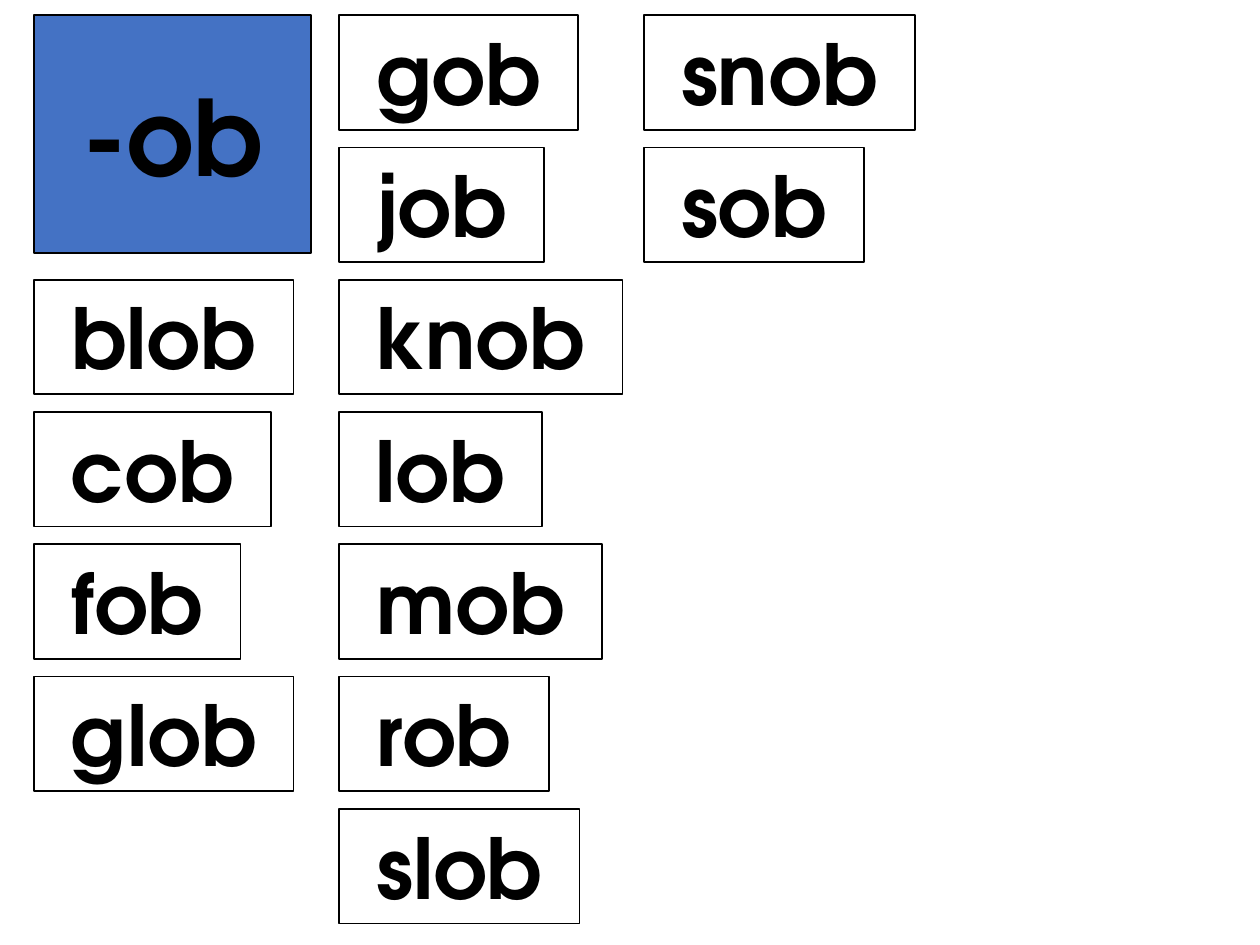
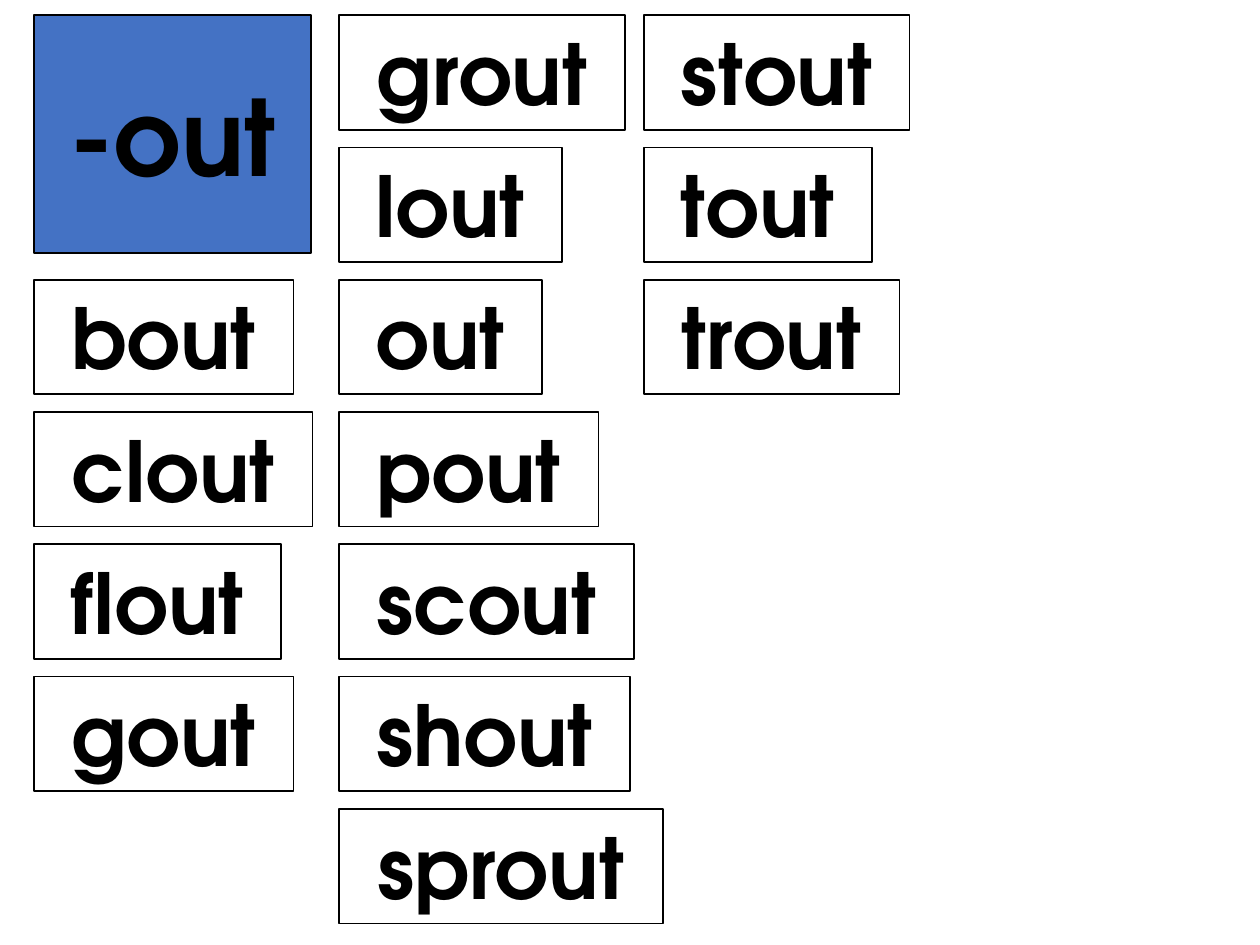
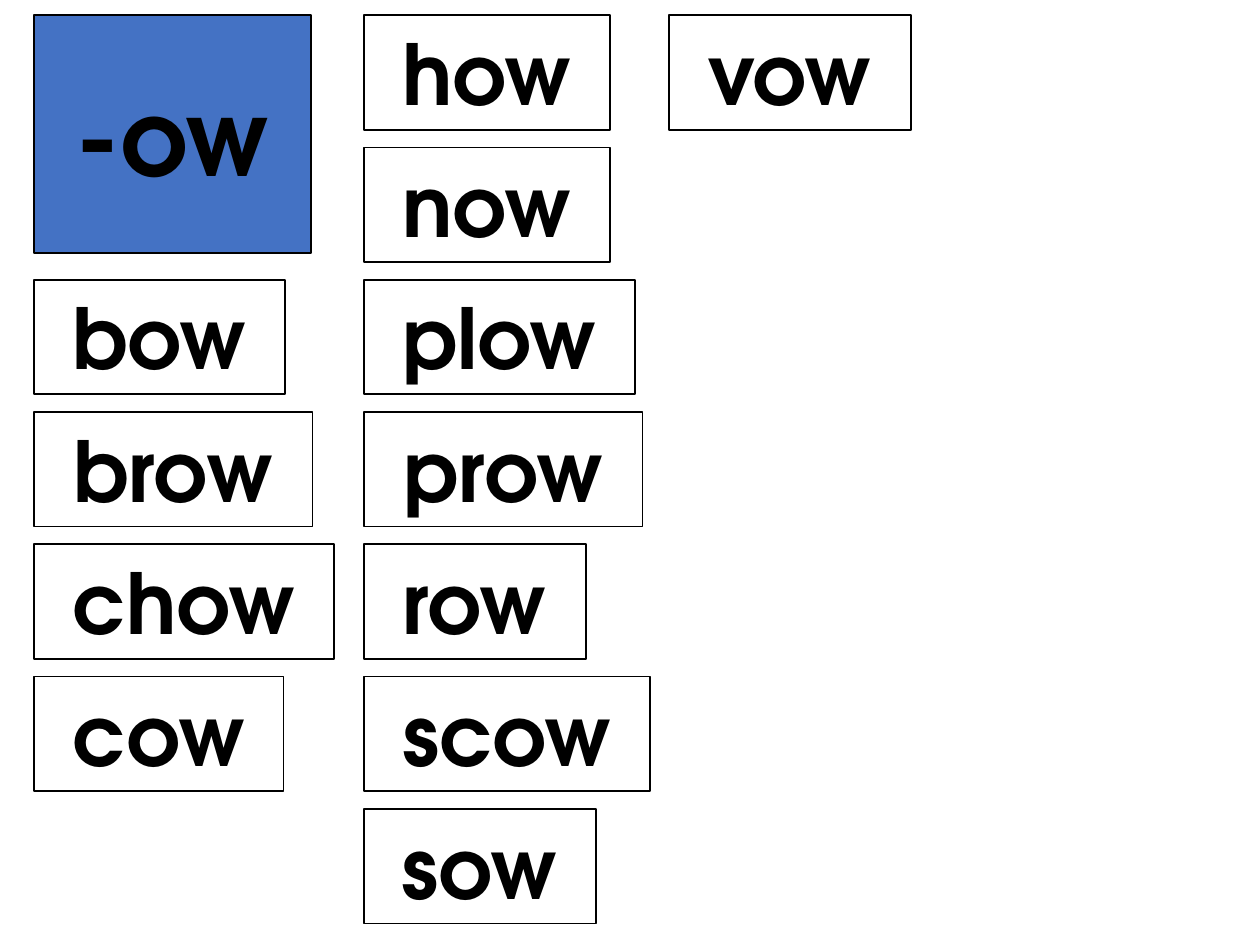
from dataclasses import dataclass

from pptx import Presentation
from pptx.dml.color import RGBColor
from pptx.enum.shapes import MSO_SHAPE
from pptx.enum.text import MSO_ANCHOR as Anchor, PP_ALIGN as Align
from pptx.util import Inches, Pt

# Shared style
FONT = "TeX Gyre Adventor"
BLACK, WHITE, BLUE = "000000", "FFFFFF", "4472C4"

# Shared grid, in inches
LEFT, TOP = 0.27, 0.12
ROW_STEP, COLUMN_STEP = 1.05, 2.42
CARD_HEIGHT = 0.91
FAMILY_WIDTH, FAMILY_HEIGHT = 2.2, 1.89
FIRST_COLUMN_ROW = 2  # the family card fills the two rows above


@dataclass(frozen=True)
class WordCard:
    word: str
    width: float


@dataclass(frozen=True)
class WordFamily:
    ending: str
    second_column_left: float
    columns: list[list[WordCard]]


FAMILIES = [
    WordFamily("-ob", 2.69, [
        [WordCard("blob", 2.06), WordCard("cob", 1.88),
         WordCard("fob", 1.64), WordCard("glob", 2.06)],
        [WordCard("gob", 1.9), WordCard("job", 1.63), WordCard("knob", 2.25),
         WordCard("lob", 1.61), WordCard("mob", 2.09), WordCard("rob", 1.67),
         WordCard("slob", 1.91)],
        [WordCard("snob", 2.15), WordCard("sob", 1.75)],
    ]),
    WordFamily("-out", 2.69, [
        [WordCard("bout", 2.06), WordCard("clout", 2.21),
         WordCard("flout", 1.96), WordCard("gout", 2.06)],
        [WordCard("grout", 2.27), WordCard("lout", 1.77), WordCard("out", 1.61),
         WordCard("pout", 2.06), WordCard("scout", 2.34), WordCard("shout", 2.31),
         WordCard("sprout", 2.57)],
        [WordCard("stout", 2.11), WordCard("tout", 1.81), WordCard("trout", 2.03)],
    ]),
    WordFamily("-ow", 2.89, [
        [WordCard("bow", 1.99), WordCard("brow", 2.21),
         WordCard("chow", 2.38), WordCard("cow", 1.98)],
        [WordCard("how", 1.95), WordCard("now", 1.95), WordCard("plow", 2.15),
         WordCard("prow", 2.21), WordCard("row", 1.76), WordCard("scow", 2.27),
         WordCard("sow", 1.84)],
        [WordCard("vow", 1.92)],
    ]),
]


def rgb(color: str) -> RGBColor:
    return RGBColor.from_string(color)


def draw_card(slide, text: str, left: float, top: float, width: float,
              height: float, fill: str, size: int, anchor: Anchor, wrap: bool) -> None:
    card = slide.shapes.add_shape(MSO_SHAPE.RECTANGLE, Inches(left), Inches(top),
                                  Inches(width), Inches(height))
    card.shadow.inherit = False
    card.fill.solid()
    card.fill.fore_color.rgb = rgb(fill)
    card.line.color.rgb = rgb(BLACK)
    card.line.width = Pt(1)

    frame = card.text_frame
    frame.word_wrap = wrap
    frame.vertical_anchor = anchor
    paragraph = frame.paragraphs[0]
    paragraph.text = text
    paragraph.alignment = Align.CENTER
    paragraph.font.name = FONT
    paragraph.font.size = Pt(size)
    paragraph.font.bold = True
    paragraph.font.color.rgb = rgb(BLACK)


def draw_family(slide, family: WordFamily) -> None:
    # Family card
    draw_card(slide, family.ending, LEFT, TOP, FAMILY_WIDTH, FAMILY_HEIGHT,
              BLUE, 60, Anchor.MIDDLE, wrap=True)

    # Word cards, column by column
    second = family.second_column_left
    lefts = [LEFT, second, second + COLUMN_STEP]
    first_rows = [FIRST_COLUMN_ROW, 0, 0]
    for left, first_row, cards in zip(lefts, first_rows, family.columns):
        for row, card in enumerate(cards, first_row):
            draw_card(slide, card.word, left, TOP + row * ROW_STEP, card.width,
                      CARD_HEIGHT, WHITE, 48, Anchor.TOP, wrap=False)


def main() -> None:
    deck = Presentation()
    deck.slide_width, deck.slide_height = Inches(10), Inches(7.5)
    blank = deck.slide_layouts[6]
    for family in FAMILIES:
        draw_family(deck.slides.add_slide(blank), family)
    deck.save("out.pptx")


if __name__ == "__main__":
    main()
